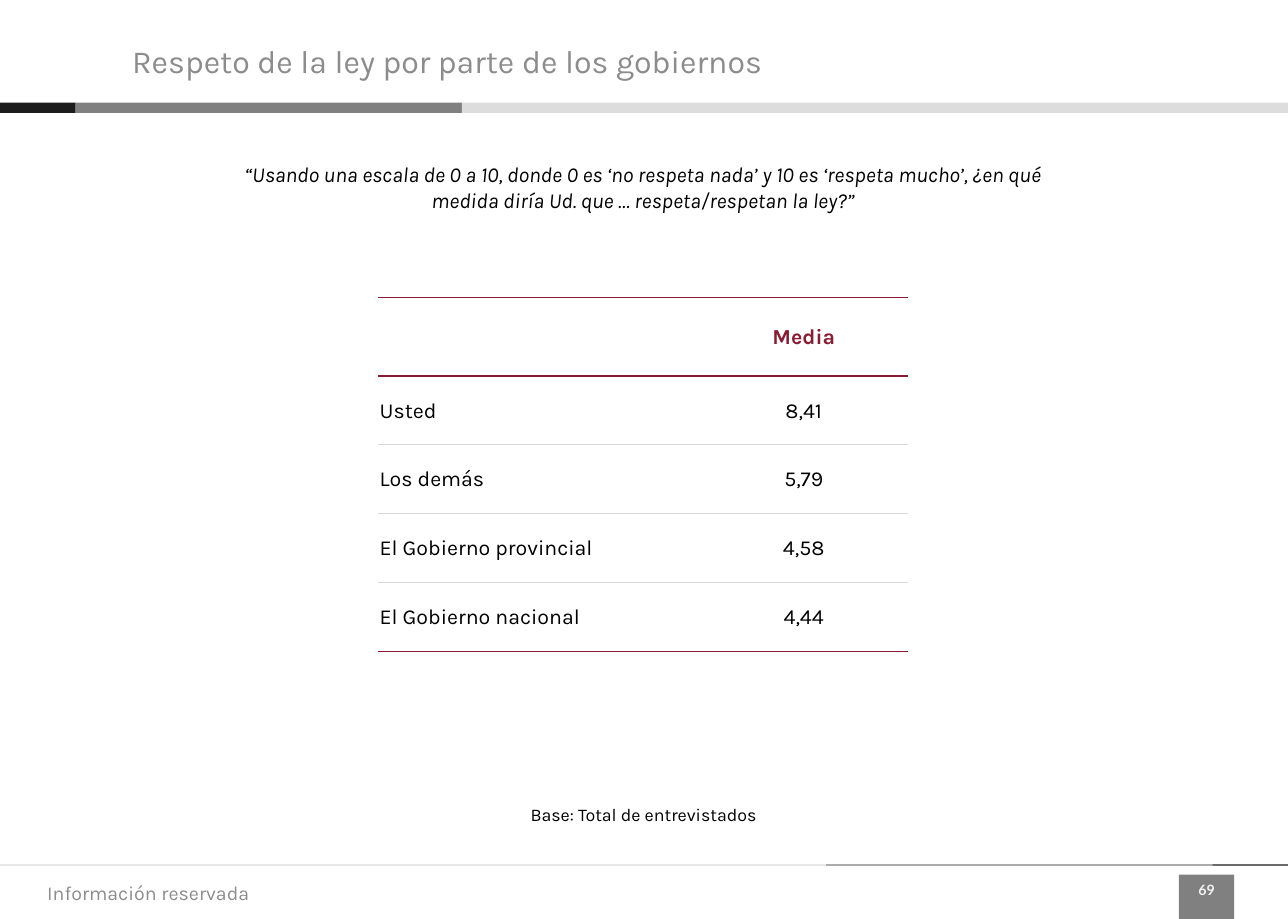
from dataclasses import dataclass

from lxml import etree
from pptx import Presentation
from pptx.dml.color import RGBColor
from pptx.enum.shapes import MSO_SHAPE
from pptx.enum.text import MSO_ANCHOR as Anchor, MSO_AUTO_SIZE as AutoSize, PP_ALIGN as Align
from pptx.oxml.ns import qn
from pptx.util import Inches, Pt


@dataclass(frozen=True)
class Theme:
    font: str = "Karla"
    number_font: str = "Lato"
    black: str = "000000"
    dark: str = "1C1C1C"
    mid: str = "808080"
    light: str = "DDDDDD"
    muted: str = "8C8C8C"
    number: str = "F2F2F2"
    accent: str = "881C33"
    rule: str = "D8D8D8"
    title_size: float = 18
    body_size: float = 12
    footer_size: float = 11
    base_size: float = 10
    number_size: float = 8


THEME = Theme()
CM_PER_INCH = 2.54
SLIDE_WIDTH, SLIDE_HEIGHT = 25.5 / CM_PER_INCH, 18.2 / CM_PER_INCH
PLAIN_TABLE_STYLE = "{2D5ABB26-0587-4C30-8999-92F81FD0307C}"
ROWS = [
    ("", "Media"),
    ("Usted", "8,41"),
    ("Los demás", "5,79"),
    ("El Gobierno provincial", "4,58"),
    ("El Gobierno nacional", "4,44"),
]
COLUMN_WIDTHS = (2.5, 1.63)
TABLE_HEIGHT, HEADER_HEIGHT = 2.76, 0.61
ROW_HEIGHT = (TABLE_HEIGHT - HEADER_HEIGHT) / (len(ROWS) - 1)


def write(frame, text, size, color, align=Align.LEFT, font=THEME.font, bold=False, italic=False):
    paragraph = frame.paragraphs[0]
    paragraph.text = text
    paragraph.alignment = align
    style = paragraph.font
    style.name, style.size = font, Pt(size)
    style.bold, style.italic = bold, italic
    style.color.rgb = RGBColor.from_string(color)


def add_block(slide, left, top, width, height, color):
    block = slide.shapes.add_shape(
        MSO_SHAPE.RECTANGLE, Inches(left), Inches(top), Inches(width), Inches(height))
    block.shadow.inherit = False
    block.fill.solid()
    block.fill.fore_color.rgb = RGBColor.from_string(color)
    block.line.fill.background()
    return block


def add_band(slide, top, height, segments):
    """Lay (width, color) segments side by side from the left slide edge."""
    left = 0
    for width, color in segments:
        add_block(slide, left, top, width, height, color)
        left += width


def add_label(slide, left, top, width, height, text, size, color,
              anchor=Anchor.TOP, wrap=True, **style):
    frame = slide.shapes.add_textbox(
        Inches(left), Inches(top), Inches(width), Inches(height)).text_frame
    frame.word_wrap = wrap
    frame.vertical_anchor = anchor
    write(frame, text, size, color, **style)


def set_title(slide, text):
    title = slide.shapes.title
    title.left, title.top = Inches(0.93), Inches(0.2)
    title.width, title.height = Inches(7.88), Inches(0.55)
    frame = title.text_frame
    frame.auto_size = AutoSize.NONE
    frame.vertical_anchor = Anchor.MIDDLE
    write(frame, text, THEME.title_size, THEME.muted)


def add_page_number(slide, number):
    tab = add_block(slide, 9.19, 6.82, 0.43, 0.35, THEME.mid)
    tab.text_frame.vertical_anchor = Anchor.TOP
    write(tab.text_frame, number, THEME.number_size, THEME.number,
          align=Align.CENTER, font=THEME.number_font, bold=True)


def set_borders(cell, top, bottom):
    """Draw (color, points) rules above and below the cell."""
    properties = cell._tc.get_or_add_tcPr()
    for position, (tag, (color, points)) in enumerate((("a:lnT", top), ("a:lnB", bottom))):
        line = etree.Element(qn(tag), w=str(Pt(points)))
        fill = etree.SubElement(line, qn("a:solidFill"))
        etree.SubElement(fill, qn("a:srgbClr"), val=color)
        etree.SubElement(line, qn("a:prstDash"), val="solid")
        properties.insert(position, line)


def add_means_table(slide, left, top):
    table = slide.shapes.add_table(
        len(ROWS), len(COLUMN_WIDTHS), Inches(left), Inches(top),
        Inches(sum(COLUMN_WIDTHS)), Inches(TABLE_HEIGHT)).table
    table.first_row = table.horz_banding = False
    table._tbl.tblPr.find(qn("a:tableStyleId")).text = PLAIN_TABLE_STYLE
    for column, width in zip(table.columns, COLUMN_WIDTHS):
        column.width = Inches(width)

    thick, thin = (THEME.accent, 1), (THEME.rule, 0.5)
    rules = [thick, thick] + [thin] * (len(ROWS) - 2) + [thick]
    for r, values in enumerate(ROWS):
        is_header = r == 0
        table.rows[r].height = Inches(HEADER_HEIGHT if is_header else ROW_HEIGHT)
        for c, value in enumerate(values):
            cell = table.cell(r, c)
            cell.fill.background()
            cell.margin_left = cell.margin_right = cell.margin_top = Inches(0.01)
            cell.margin_bottom = 0
            cell.vertical_anchor = Anchor.MIDDLE
            write(cell.text_frame, value, THEME.body_size,
                  THEME.accent if is_header else THEME.black,
                  align=Align.CENTER if c else Align.LEFT, bold=is_header)
            set_borders(cell, rules[r], rules[r + 1])


def main():
    deck = Presentation()
    deck.slide_width, deck.slide_height = Inches(SLIDE_WIDTH), Inches(SLIDE_HEIGHT)
    slide = deck.slides.add_slide(deck.slide_layouts[5])

    segments = [(0.59, THEME.dark), (3.01, THEME.mid), (6.44, THEME.light)]
    add_page_number(slide, "69")
    add_band(slide, 0.8, 0.08, segments)
    add_band(slide, 6.74, 0.01, segments[::-1])
    add_label(slide, 0.27, 6.77, 2.34, 0.38, "Información reservada",
              THEME.footer_size, THEME.muted, anchor=Anchor.MIDDLE)

    set_title(slide, "Respeto de la ley por parte de los gobiernos")
    add_label(slide, 1.58, 1.21, 6.87, 0.5,
              "“Usando una escala de 0 a 10, donde 0 es ‘no respeta nada’ y 10 es "
              "‘respeta mucho’, ¿en qué medida diría Ud. que … respeta/respetan la ley?”",
              THEME.body_size, THEME.black, align=Align.CENTER, italic=True)
    add_means_table(slide, 2.95, 2.32)
    add_label(slide, 3.97, 6.22, 2.09, 0.28, "Base: Total de entrevistados",
              THEME.base_size, THEME.black, wrap=False, align=Align.CENTER)

    deck.save("out.pptx")


if __name__ == "__main__":
    main()
